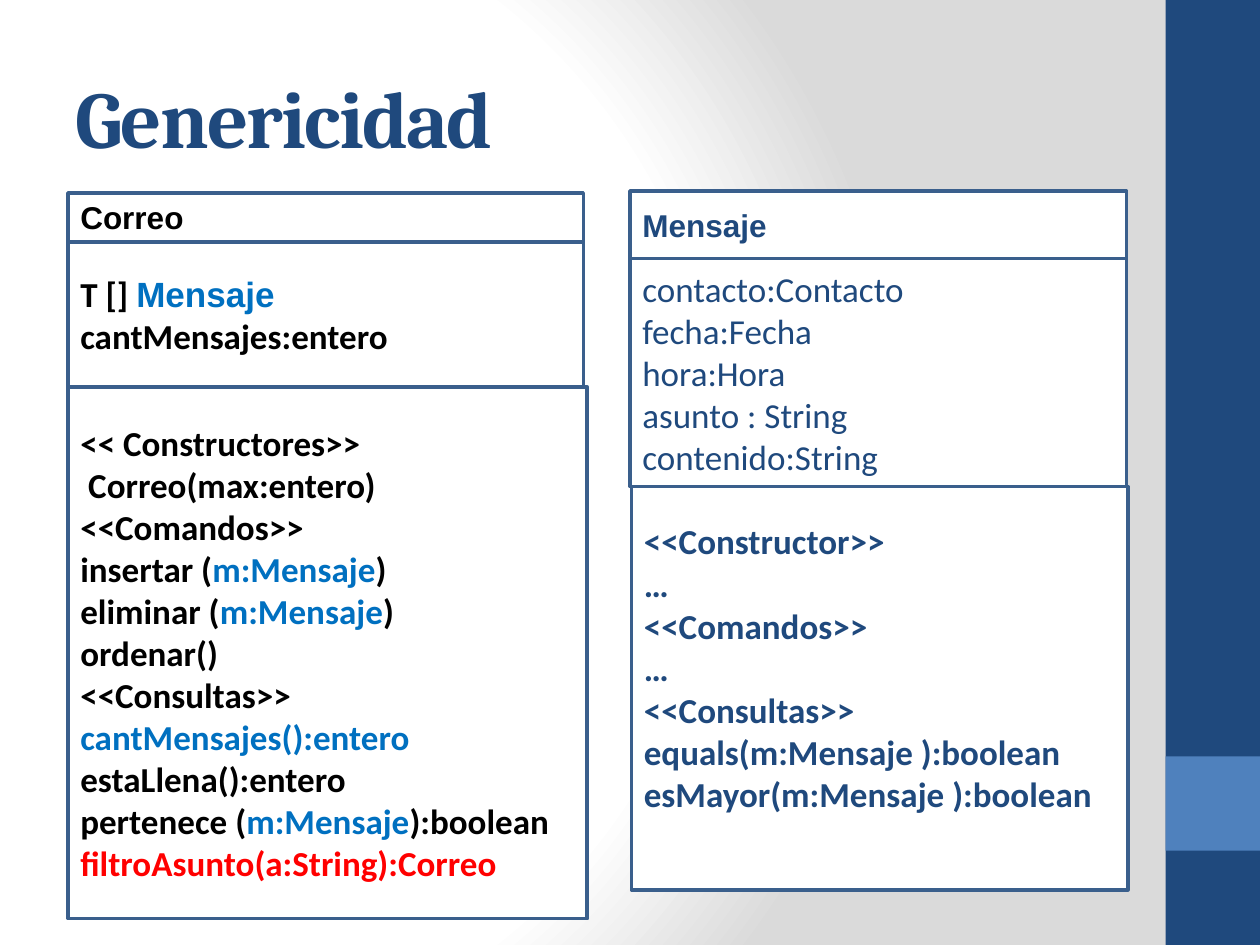
from dataclasses import dataclass

from lxml.etree import SubElement
from pptx import Presentation
from pptx.dml.color import RGBColor
from pptx.enum.shapes import MSO_SHAPE as Preset
from pptx.enum.text import MSO_ANCHOR as Anchor, PP_ALIGN as Align
from pptx.oxml.ns import qn
from pptx.util import Cm, Pt

NAVY, BLUE, BORDER = "1F497D", "4F81BD", "3A5F8C"
WHITE, BLACK, ACCENT, RED = "FFFFFF", "000000", "0070C0", "FF0000"
SLIDE_WIDTH, SLIDE_HEIGHT = 25.4, 19.05


@dataclass
class Compartment:
    """One box of a class diagram; a line is a string or a list of (text, overrides)."""
    height: float
    lines: list
    font: str = "Calibri"
    size: float = 20
    bold: bool = True
    shift: float = 0
    extra_width: float = 0
    bottom_inset: float = 0.13


def color(hex_string):
    return RGBColor.from_string(hex_string)


def style_run(run, font, size, hex_color, bold):
    run.font.name = font
    run.font.size = Pt(size)
    run.font.bold = bold
    run.font.color.rgb = color(hex_color)


def add_background(slide):
    """Radial gradient from a white centre on the left to grey."""
    fill = slide.background.fill
    fill.gradient()
    gradient = slide.background._cSld.find(".//" + qn("a:gradFill"))
    for child in list(gradient):
        gradient.remove(child)
    stops = SubElement(gradient, qn("a:gsLst"))
    for position, hex_color in ((0, WHITE), (75, WHITE), (100, "DADADA")):
        stop = SubElement(stops, qn("a:gs"), pos=str(position * 1000))
        SubElement(stop, qn("a:srgbClr"), val=hex_color)
    circle = SubElement(gradient, qn("a:path"), path="circle")
    SubElement(circle, qn("a:fillToRect"), l="20000", t="50000", r="100000", b="50000")


def add_box(slide, left, top, width, height, fill, line=None):
    shape = slide.shapes.add_shape(Preset.RECTANGLE, Cm(left), Cm(top), Cm(width), Cm(height))
    shape.shadow.inherit = False
    shape.fill.solid()
    shape.fill.fore_color.rgb = color(fill)
    if line:
        shape.line.color.rgb = color(line)
        shape.line.width = Pt(2)
    else:
        shape.line.fill.background()
    return shape


def add_side_band(slide, left, width):
    add_box(slide, left, 0, width, SLIDE_HEIGHT, NAVY)
    add_box(slide, left, SLIDE_HEIGHT - 2 * width, width, width, BLUE)


def add_title(slide, left, top, width, height, text):
    frame = slide.shapes.add_textbox(Cm(left), Cm(top), Cm(width), Cm(height)).text_frame
    frame.word_wrap = True
    frame.vertical_anchor = Anchor.MIDDLE
    frame.text = text
    run = frame.paragraphs[0].runs[0]
    style_run(run, "Cambria", 46, NAVY, True)
    run.font._element.set("spc", "-100")


def write_lines(frame, compartment, hex_color):
    for index, line in enumerate(compartment.lines):
        paragraph = frame.add_paragraph() if index else frame.paragraphs[0]
        paragraph.alignment = Align.LEFT
        segments = [(line, {})] if isinstance(line, str) else line
        for text, overrides in segments:
            run = paragraph.add_run()
            run.text = text
            look = {"font": compartment.font, "size": compartment.size,
                    "hex_color": hex_color, "bold": compartment.bold}
            style_run(run, **{**look, **overrides})


def add_class_diagram(slide, left, top, width, hex_color, compartments):
    for compartment in compartments:
        shape = add_box(slide, left + compartment.shift, top,
                        width + compartment.extra_width, compartment.height, WHITE, BORDER)
        frame = shape.text_frame
        frame.word_wrap = True
        frame.vertical_anchor = Anchor.MIDDLE
        frame.margin_bottom = Cm(compartment.bottom_inset)
        write_lines(frame, compartment, hex_color)
        top += compartment.height


def with_message(before, after):
    """Line whose message parameter is highlighted."""
    return [(before, {}), ("m:Mensaje", {"hex_color": ACCENT}), (after, {})]


MENSAJE = [
    Compartment(1.36, ["Mensaje"], font="Arial", size=18),
    Compartment(4.6, ["contacto:Contacto", "fecha:Fecha", "hora:Hora",
                      "asunto : String", "contenido:String"], bold=False),
    Compartment(8.13, ["<<Constructor>>", "…", "<<Comandos>>", "…", "<<Consultas>>",
                       "equals(m:Mensaje ):boolean", "esMayor(m:Mensaje ):boolean"],
                shift=0.03, bottom_inset=0.98),
]

CORREO = [
    Compartment(0.99, ["Correo"], font="Arial", size=18),
    Compartment(2.92, [[("T [] ", {}), ("Mensaje", {"font": "Arial", "hex_color": ACCENT})],
                       "cantMensajes:entero"]),
    Compartment(10.72, ["<< Constructores>>", " Correo(max:entero)", "<<Comandos>>",
                        with_message("insertar (", ")"),
                        with_message("eliminar (", ")"),
                        "ordenar()", "<<Consultas>>",
                        [("cantMensajes():entero", {"hex_color": ACCENT})],
                        "estaLlena():entero",
                        with_message("pertenece (", "):boolean"),
                        [("filtroAsunto(a:String):Correo", {"hex_color": RED})]],
                extra_width=0.08),
]


def main():
    presentation = Presentation()
    presentation.slide_width = Cm(SLIDE_WIDTH)
    presentation.slide_height = Cm(SLIDE_HEIGHT)
    slide = presentation.slides.add_slide(presentation.slide_layouts[6])
    add_background(slide)
    add_side_band(slide, 23.5, 1.9)
    add_title(slide, 1.27, 0.76, 21.16, 3.18, "Genericidad")
    add_class_diagram(slide, 12.7, 3.85, 10.01, NAVY, MENSAJE)
    add_class_diagram(slide, 1.37, 3.89, 10.39, BLACK, CORREO)
    presentation.save("out.pptx")


if __name__ == "__main__":
    main()
